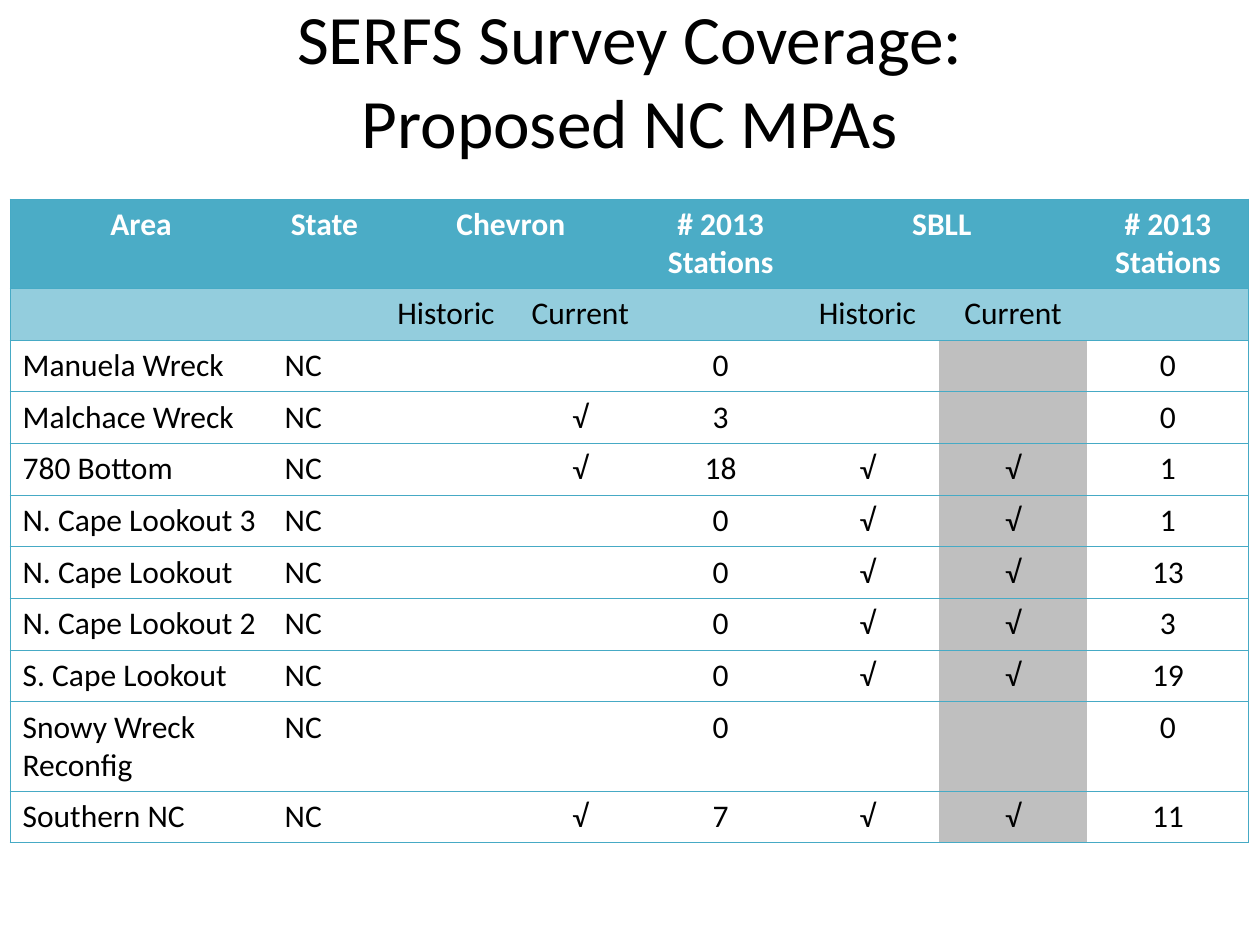
from typing import NamedTuple

from lxml.etree import SubElement
from pptx import Presentation
from pptx.dml.color import RGBColor
from pptx.enum.text import MSO_ANCHOR, MSO_AUTO_SIZE, PP_ALIGN
from pptx.oxml.ns import qn
from pptx.table import Table, _Cell as Cell
from pptx.util import Inches, Pt

COLORS = {
    "text": "000000",
    "header_text": "FFFFFF",
    "header": "4BACC6",
    "subheader": "93CDDD",
    "current_sbll": "BFBFBF",
    "body": "FFFFFF",
    "border": "46AAC5",
}
FONT = "Calibri"
NO_STYLE = "{2D5ABB26-0587-4C30-8999-92F81FD0307C}"
CHECK = "√"
COLUMN_WIDTHS = [2.08, 0.83, 1.1, 1.03, 1.2, 1.13, 1.18, 1.28]
ROW_HEIGHT = 0.41
CURRENT_SBLL_COLUMN = 6
HEADER = ["Area", "State", "Chevron", "", "# 2013 Stations", "SBLL", "", "# 2013 Stations"]
SUBHEADER = ["", "", "Historic", "Current", "", "Historic", "Current", ""]


class Area(NamedTuple):
    name: str
    chevron_current: bool
    chevron_stations: int
    sbll: bool  # surveyed both historically and currently
    sbll_stations: int

    def texts(self) -> list[str]:
        chevron = CHECK if self.chevron_current else ""
        sbll = CHECK if self.sbll else ""
        return [self.name, "NC", "", chevron, str(self.chevron_stations),
                sbll, sbll, str(self.sbll_stations)]


AREAS = [
    Area("Manuela Wreck", False, 0, False, 0),
    Area("Malchace Wreck", True, 3, False, 0),
    Area("780 Bottom", True, 18, True, 1),
    Area("N. Cape Lookout 3", False, 0, True, 1),
    Area("N. Cape Lookout", False, 0, True, 13),
    Area("N. Cape Lookout 2", False, 0, True, 3),
    Area("S. Cape Lookout", False, 0, True, 19),
    Area("Snowy Wreck Reconfig", False, 0, False, 0),
    Area("Southern NC", True, 7, True, 11),
]


def set_borders(cell: Cell, sides: str) -> None:
    """Draw the named sides (from L, R, T, B) and hide the others."""
    properties = cell._tc.get_or_add_tcPr()
    for side in "LRTB":
        line = SubElement(properties, qn(f"a:ln{side}"), w=str(Pt(0.75)))
        if side in sides:
            fill = SubElement(line, qn("a:solidFill"))
            SubElement(fill, qn("a:srgbClr"), val=COLORS["border"])
        else:
            SubElement(line, qn("a:noFill"))


def fill_row(table: Table, row: int, texts: list[str], fill: str,
             color: str = "text", bold: bool = False, centered_from: int = 0) -> None:
    last = len(texts) - 1
    for column, text in enumerate(texts):
        cell = table.cell(row, column)
        set_borders(cell, "TB" + "L" * (column == 0) + "R" * (column == last))
        shaded = fill == "body" and column == CURRENT_SBLL_COLUMN
        cell.fill.solid()
        cell.fill.fore_color.rgb = RGBColor.from_string(
            COLORS["current_sbll" if shaded else fill])
        cell.text = text
        para = cell.text_frame.paragraphs[0]
        para.alignment = PP_ALIGN.CENTER if column >= centered_from else PP_ALIGN.LEFT
        para.font.name = FONT
        para.font.size = Pt(18)
        para.font.bold = bold
        para.font.color.rgb = RGBColor.from_string(COLORS[color])


deck = Presentation()
deck.slide_width, deck.slide_height = Inches(10), Inches(7.5)
page = deck.slides.add_slide(deck.slide_layouts[5])

# Title
title = page.shapes.title
title.left, title.top, title.width, title.height = (
    Inches(0.5), Inches(0), Inches(9), Inches(1.25))
frame = title.text_frame
frame.text = "SERFS Survey Coverage:\vProposed NC MPAs"
frame.auto_size = MSO_AUTO_SIZE.NONE
frame.vertical_anchor = MSO_ANCHOR.MIDDLE
heading = frame.paragraphs[0]
heading.alignment = PP_ALIGN.CENTER
heading.font.name = FONT
heading.font.size = Pt(39.6)
heading.font.color.rgb = RGBColor.from_string(COLORS["text"])

# Survey table
row_count = len(AREAS) + 2
table = page.shapes.add_table(
    row_count, len(COLUMN_WIDTHS), Inches(0.08), Inches(1.58),
    Inches(sum(COLUMN_WIDTHS)), Inches(ROW_HEIGHT * row_count)).table
table.horz_banding = False
table._tbl.tblPr.find(qn("a:tableStyleId")).text = NO_STYLE
for column, width in zip(table.columns, COLUMN_WIDTHS):
    column.width = Inches(width)
for row in table.rows:
    row.height = Inches(ROW_HEIGHT)

fill_row(table, 0, HEADER, "header", color="header_text", bold=True)
fill_row(table, 1, SUBHEADER, "subheader")
for index, area in enumerate(AREAS, start=2):
    fill_row(table, index, area.texts(), "body", centered_from=2)

# Chevron and SBLL headings span two columns each
for start in (2, 5):
    table.cell(0, start).merge(table.cell(0, start + 1))

deck.save("out.pptx")
